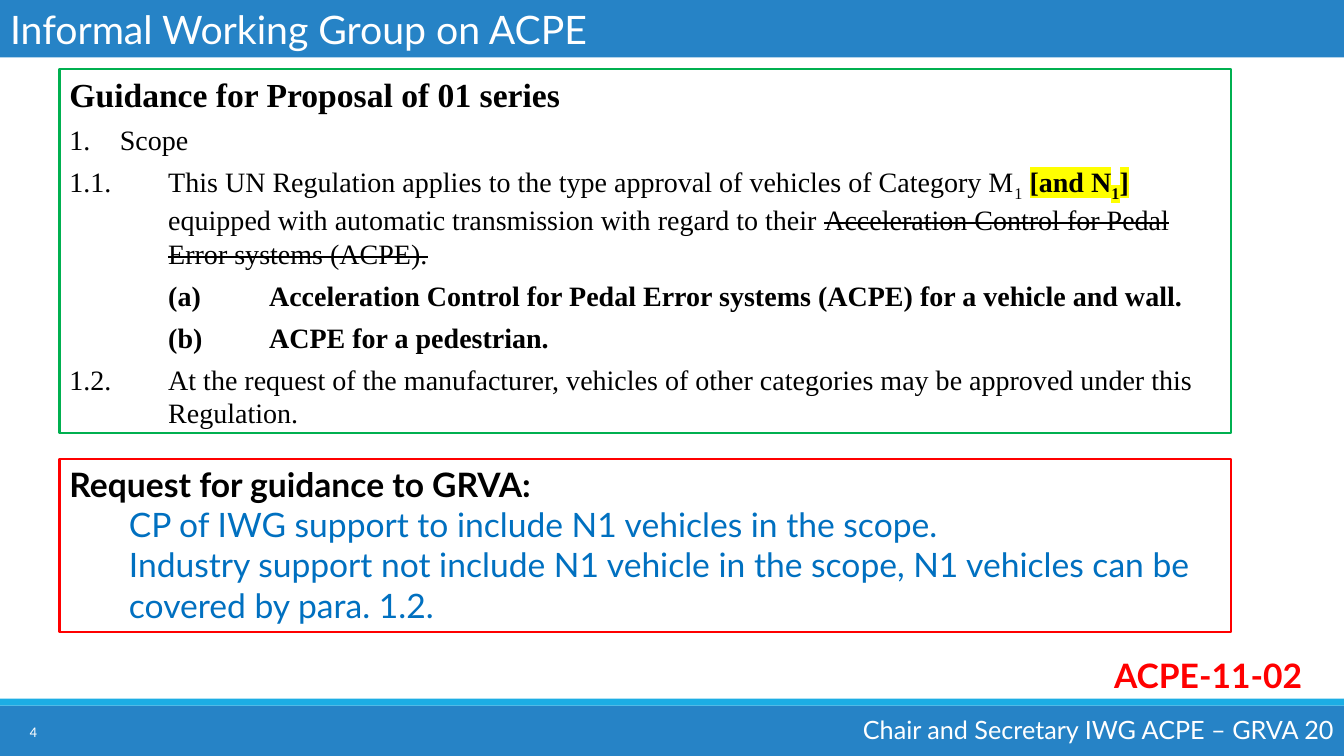
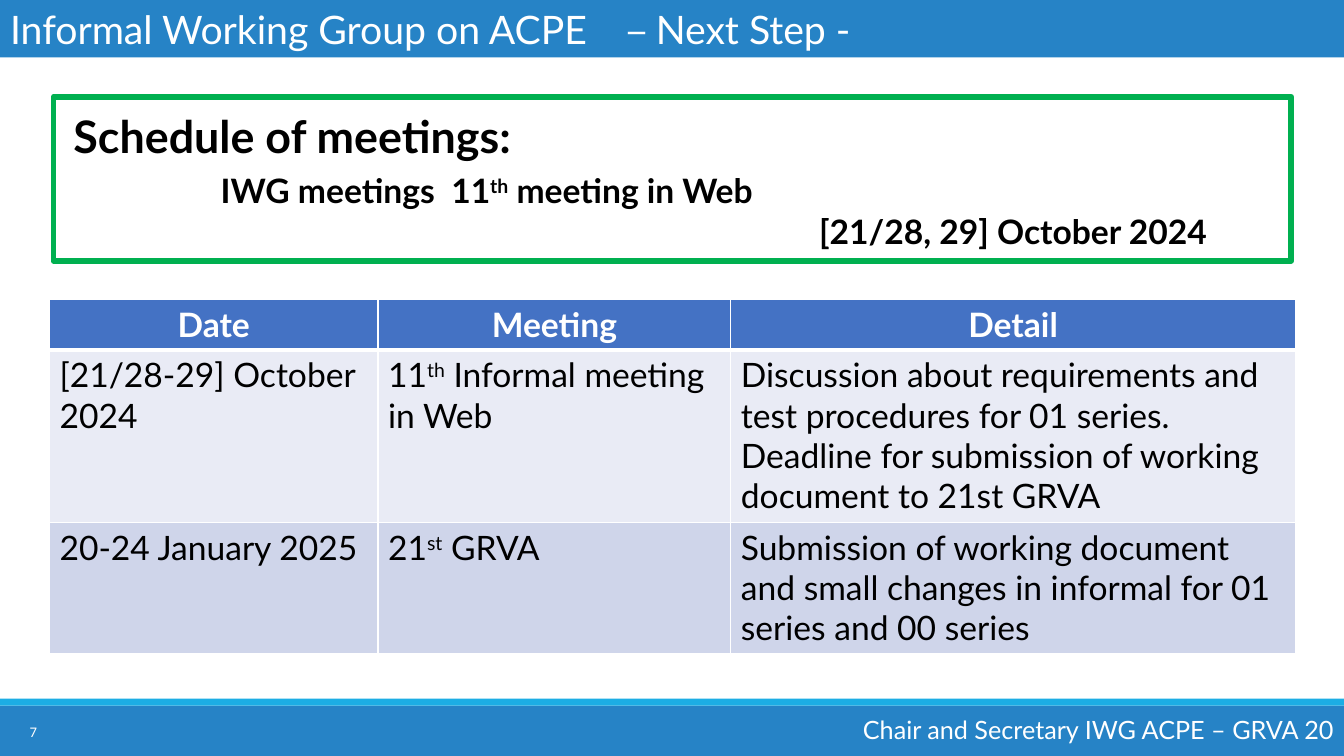
from lxml import etree
from pptx import Presentation
from pptx import util as u
from pptx.dml.color import RGBColor
from pptx.enum import shapes, text
from pptx.oxml.ns import qn

HEX = {
    "band": "2683C6", "accent": "1CADE4", "white": "FFFFFF", "black": "000000",
    "green": "00B050", "red": "FF0000", "blue": "0070C0", "mark": "FFFF00",
    "head": "4472C4", "pale": "E9EBF5", "tint": "CFD5EA",
}
SANS, SERIF, SMALL = "Lato", "Times New Roman", "Calibri"
ALIGN = {
    "l": text.PP_ALIGN.LEFT, "c": text.PP_ALIGN.CENTER,
    "r": text.PP_ALIGN.RIGHT, "j": text.PP_ALIGN.JUSTIFY,
}

# Grid: 100 columns by 100 rows over the whole slide
WIDE, HIGH = u.Inches(40 / 3), u.Inches(7.5)
FOOT = "Chair and Secretary IWG ACPE – GRVA 20"
TITLE = "Informal Working Group on ACPE"


def cols(n):
    return round(WIDE * n / 100)


def rows(n):
    return round(HIGH * n / 100)


def grid(left, top, wide, high):
    return cols(left), rows(top), cols(wide), rows(high)


def color(name):
    return RGBColor.from_string(HEX[name])


def solid(parent, tag, name):
    """Append an element that holds one plain colour."""
    node = etree.SubElement(parent, qn(tag))
    etree.SubElement(node, qn("a:srgbClr"), val=HEX[name])
    return node


# Text
def add_run(para, words, size=24, font=SANS, ink="black", bold=False,
            base=0, strike=False, mark=None):
    run = para.add_run()
    run.text = words
    run.font.size = u.Pt(size)
    run.font.name = font
    run.font.bold = bold
    run.font.color.rgb = color(ink)
    props = run._r.get_or_add_rPr()
    if base:
        props.set("baseline", str(base * 1000))
    if strike:
        props.set("strike", "sngStrike")
    if mark:
        props.find(qn("a:solidFill")).addnext(solid(props, "a:highlight", mark))


def write(frame, words, new=False, align="l", after=0, left=0, first=0,
          number=False, **style):
    """Write one paragraph; words is a string or a list of (string, format)."""
    para = frame.add_paragraph() if new else frame.paragraphs[0]
    para.alignment = ALIGN[align]
    para.space_after = u.Pt(after)
    para.line_spacing = 1.0
    props = para._p.get_or_add_pPr()
    if left:
        props.set("marL", str(u.Inches(left)))
        props.set("indent", str(u.Inches(first)))
    if number:
        etree.SubElement(props, qn("a:buFont"), typeface="+mj-lt")
        etree.SubElement(props, qn("a:buAutoNum"), type="arabicPeriod")
    for part, extra in [(words, {})] if isinstance(words, str) else words:
        add_run(para, part, **{**style, **extra})


# Shapes
def box(slide, area, fill=None, line=None, width=1.5):
    shape = slide.shapes.add_shape(shapes.MSO_SHAPE.RECTANGLE, *grid(*area))
    shape.shadow.inherit = False
    if fill:
        shape.fill.solid()
        shape.fill.fore_color.rgb = color(fill)
    else:
        shape.fill.background()
    if line:
        shape.line.color.rgb = color(line)
        shape.line.width = u.Pt(width)
    else:
        shape.line.fill.background()
    frame = shape.text_frame
    frame.word_wrap = True
    frame.vertical_anchor = text.MSO_ANCHOR.TOP
    return frame


def label(slide, area, words, **style):
    frame = slide.shapes.add_textbox(*grid(*area)).text_frame
    frame.word_wrap = True
    write(frame, words, **style)
    return frame


# Shared frame: title bar, footer bands, page number
def page(deck, title, number):
    slide = deck.slides.add_slide(deck.slide_layouts[5])
    bar = slide.shapes.title
    bar.left, bar.top, bar.width, bar.height = grid(0, 0, 100, 7.6)
    bar.fill.solid()
    bar.fill.fore_color.rgb = color("band")
    bar.text_frame.auto_size = text.MSO_AUTO_SIZE.NONE
    bar.text_frame.vertical_anchor = text.MSO_ANCHOR.TOP
    write(bar.text_frame, title, size=28, ink="white")
    box(slide, (0, 93.33, 100, 6.67), fill="band")
    box(slide, (0, 92.4, 100, 0.93), fill="accent")
    num = label(slide, (0, 94.13, 3.5, 5.33), number, align="r",
                size=10.5, font=SMALL, ink="white")
    num.vertical_anchor = text.MSO_ANCHOR.MIDDLE
    label(slide, (63.15, 93.87, 36.83, 5.33), FOOT, align="r",
          size=18, ink="white")
    return slide


# Table
def edge(cell, top, low):
    props = cell._tc.get_or_add_tcPr()
    sides = (("L", 1), ("R", 1), ("T", top), ("B", low))
    for spot, (side, width) in enumerate(sides):
        line = etree.Element(qn("a:ln" + side), w=str(u.Pt(width)))
        solid(line, "a:solidFill", "white")
        props.insert(spot, line)


def table(slide, area, wides, highs, data):
    grid_ = slide.shapes.add_table(len(highs), len(wides), *grid(*area)).table
    grid_.horz_banding = False
    for col, wide in zip(grid_.columns, wides):
        col.width = cols(wide)
    for row, high in zip(grid_.rows, highs):
        row.height = rows(high)
    looks = ("head", 1, 3), ("pale", 3, 1), ("tint", 1, 1)
    for r, (line, (fill, top, low)) in enumerate(zip(data, looks)):
        head = r == 0
        for c, words in enumerate(line):
            cell = grid_.cell(r, c)
            cell.fill.solid()
            cell.fill.fore_color.rgb = color(fill)
            edge(cell, top, low)
            write(cell.text_frame, words, align="c" if head else "l",
                  bold=head, ink="white" if head else "black")


# Slides
def scope(deck):
    slide = page(deck, TITLE, "4")
    frame = box(slide, (4.43, 9.07, 87.15, 48.27), line="green")
    body = dict(new=True, size=20, font=SERIF, after=6)
    hang = dict(left=0.98, first=-0.98)
    item = dict(left=1.98, first=-1, align="j", bold=True)
    note = dict(bold=True, mark="mark")
    write(frame, "Guidance for Proposal of 01 series", font=SERIF, bold=True,
          after=6)
    write(frame, "Scope", left=0.5, first=-0.5, number=True, **body)
    write(frame, [
        ("1.1.\tThis UN Regulation applies to the type approval of vehicles "
         "of Category M", {}),
        ("1", dict(base=-25)), (" ", {}),
        ("[and N", note), ("1", dict(note, base=-25)), ("]", note),
        (" equipped with automatic transmission with regard to their ", {}),
        ("Acceleration Control for Pedal Error systems (ACPE).",
         dict(strike=True)),
    ], **hang, **body)
    for words in (
        "(a)\tAcceleration Control for Pedal Error systems (ACPE) for a "
        "vehicle and wall.",
        "(b)\tACPE for a pedestrian.",
    ):
        write(frame, words, **item, **body)
    write(frame, "1.2.\tAt the request of the manufacturer, vehicles of other "
          "categories may be approved under this Regulation.", **hang, **body)

    ask = box(slide, (4.43, 60.67, 87.15, 22.93), line="red")
    write(ask, "Request for guidance to GRVA:", bold=True)
    for words in (
        "CP of IWG support to include N1 vehicles in the scope.",
        "Industry support not include N1 vehicle in the scope, N1 vehicles "
        "can be covered by para. 1.2.",
    ):
        write(ask, words, new=True, left=0.59, ink="blue")
    label(slide, (81.6, 86, 16.58, 6.67), "ACPE-11-02", align="c",
          ink="red", bold=True)


def plan(deck):
    slide = page(deck, TITLE + "　– Next Step -", "7")
    sup = dict(base=30)
    box(slide, (3.98, 12.8, 92.1, 21.73), line="green", width=4)
    label(slide, (4.73, 13.73, 40.2, 8.53), "Schedule of meetings:",
          size=32, bold=True)
    dates = label(slide, (15.68, 21.87, 74.85, 12.13), [
        ("IWG meetings  11", {}), ("th", sup), (" meeting in Web", {}),
    ], bold=True)
    write(dates, "[21/28, 29] October 2024", new=True, align="r", bold=True)
    table(slide, (3.68, 39.6, 92.7, 46.67), (24.45, 26.25, 42),
          (6.53, 22.8, 17.33), (
        ("Date", "Meeting", "Detail"),
        ("[21/28-29] October 2024",
         [("11", {}), ("th", sup), (" Informal meeting in Web", {})],
         "Discussion about requirements and test procedures for 01 series. "
         "Deadline for submission of working document to 21st GRVA"),
        ("20-24 January 2025",
         [("21", {}), ("st", sup), (" GRVA", {})],
         "Submission of working document and small changes in informal for "
         "01 series and 00 series"),
    ))


def main():
    deck = Presentation()
    deck.slide_width, deck.slide_height = WIDE, HIGH
    scope(deck)
    plan(deck)
    deck.save("out.pptx")


if __name__ == "__main__":
    main()
